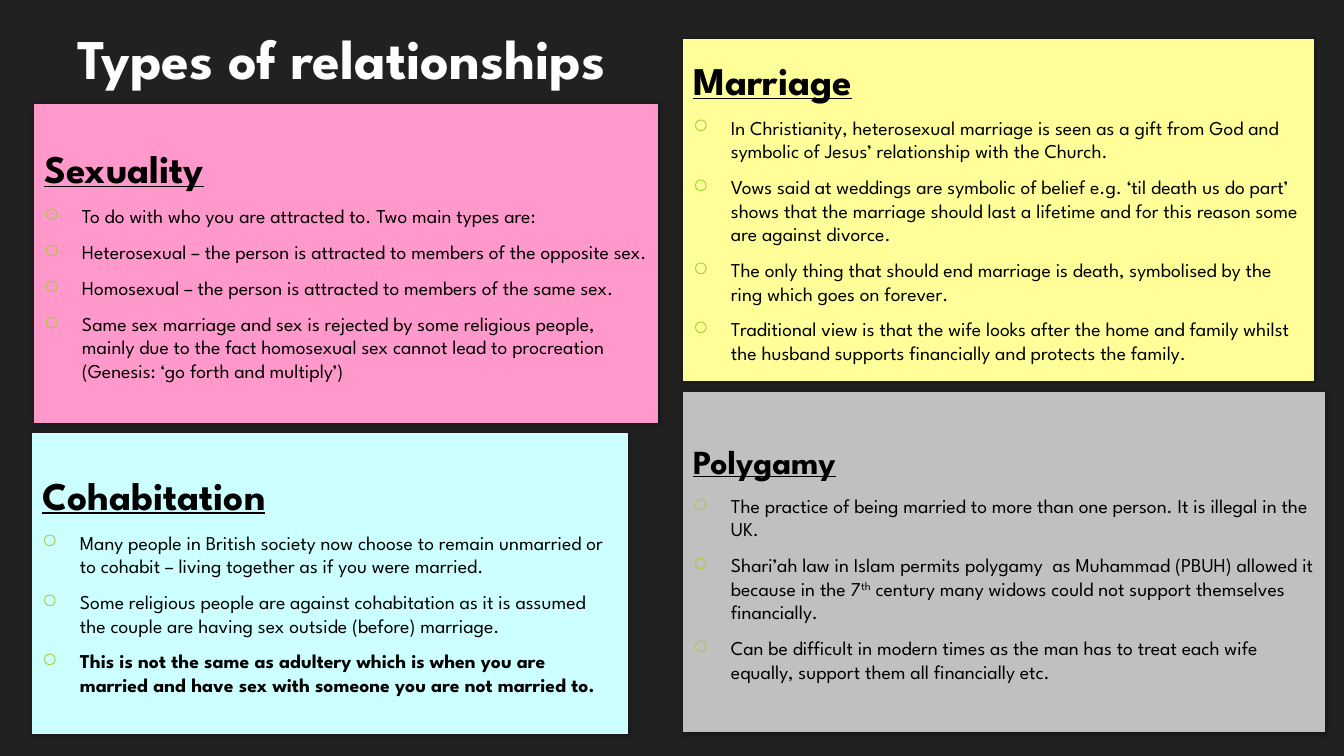
from lxml import etree
from pptx import Presentation
from pptx.dml.color import RGBColor
from pptx.enum.shapes import MSO_SHAPE
from pptx.enum.text import MSO_ANCHOR, PP_ALIGN
from pptx.oxml.ns import qn
from pptx.util import Pt

RECT = MSO_SHAPE.RECTANGLE
MIDDLE, BOTTOM = MSO_ANCHOR.MIDDLE, MSO_ANCHOR.BOTTOM
LEFT = PP_ALIGN.LEFT
FONT = "League Spartan"
BLACK, WHITE, DARK, GREEN = "000000", "FEFEFE", "212121", "9ECD33"
BODY_SIZE = 14
INDENT = Pt(27)

# Each panel: heading, heading size, fill, (left, top, width, height), points.
# A point is a list of (text, style) runs.
PANELS = [
    ("Sexuality", 28, "FF99CC", (24.5, 75, 445.5, 226.5), [
        [("To do with who you are attracted to. Two main types are:", "")],
        [("Heterosexual – the person is attracted to members of the opposite sex.", "")],
        [("Homosexual – the person is attracted to members of the same sex.", "")],
        [("Same sex marriage and sex is rejected by some religious people, mainly due to "
          "the fact homosexual sex cannot lead to procreation (Genesis: ‘go forth and "
          "multiply’)", "")],
    ]),
    ("Marriage", 28, "FFFF99", (488, 28.5, 450.5, 243.5), [
        [("In Christianity, heterosexual marriage is seen as a gift from God and symbolic "
          "of Jesus’ relationship with the Church.", "")],
        [("Vows said at weddings are symbolic of belief e.g. ‘til death us do part’ shows "
          "that the marriage should last a lifetime and for this reason some are against "
          "divorce.", "")],
        [("The only thing that should end marriage is death, symbolised by the ring which "
          "goes on forever.", "")],
        [("Traditional view is that the wife looks after the home and family whilst the "
          "husband supports financially and protects the family.", "")],
    ]),
    ("Cohabitation", 28, "CCFFFF", (23, 310, 425, 214), [
        [("Many people in British society now choose to remain unmarried or to cohabit – "
          "living together as if you were married.", "")],
        [("Some religious people are against cohabitation as it is assumed the couple are "
          "having sex outside (before) marriage.", "")],
        [("This is not the same as adultery which is when you are married and have sex "
          "with someone you are not married to.", "bold")],
    ]),
    ("Polygamy", 24, "C0C0C0", (488, 280.5, 458, 242), [
        [("The practice of being married to more than one person. It is illegal in the "
          "UK.", "")],
        [("Shari’ah law in Islam permits polygamy  as Muhammad (PBUH) allowed it because "
          "in the 7", ""), ("th", "super"),
         (" century many widows could not support themselves financially.", "")],
        [("Can be difficult in modern times as the man has to treat each wife equally, "
          "support them all financially etc.", "")],
    ]),
]


def rgb(color):
    return RGBColor.from_string(color)


def make_shadow(blur, dist, alpha):
    """Return an effect list with one black outer shadow (alpha in percent)."""
    effects = etree.Element(qn("a:effectLst"))
    shadow = etree.SubElement(effects, qn("a:outerShdw"), blurRad=str(Pt(blur)),
                              dist=str(Pt(dist)), dir="2700000", algn="tl", rotWithShape="0")
    color = etree.SubElement(shadow, qn("a:srgbClr"), val=BLACK)
    etree.SubElement(color, qn("a:alpha"), val=str(alpha * 1000))
    return effects


def add_run(p, text, size, color, bold=False, underline=False):
    r = p.add_run()
    r.text = text
    r.font.size = Pt(size)
    r.font.bold = bold
    r.font.underline = underline
    r.font.color.rgb = rgb(color)
    r.font.name = FONT
    return r


def format_paragraph(p, size, bullet):
    """Set spacing and hanging indent, with a green ring as bullet if asked."""
    p.alignment = LEFT
    p.space_before = Pt(size * 0.2)
    p.space_after = Pt(6)
    pPr = p._p.get_or_add_pPr()
    pPr.set("marL", str(INDENT))
    pPr.set("indent", str(-INDENT))
    if bullet:
        color = etree.SubElement(pPr, qn("a:buClr"))
        etree.SubElement(color, qn("a:srgbClr"), val=GREEN)
        etree.SubElement(pPr, qn("a:buChar"), char="○")


def add_title(s, text):
    tb = s.shapes.add_textbox(Pt(48), Pt(-21.5), Pt(864), Pt(90))
    tf = tb.text_frame
    tf.word_wrap = True
    tf.vertical_anchor = BOTTOM
    r = add_run(tf.paragraphs[0], text, 40, WHITE, bold=True)
    r.font.fill._xPr.find(qn("a:solidFill")).addnext(make_shadow(3, 2, 60))


def add_panel(s, heading, size, fill, box, points):
    sp = s.shapes.add_shape(RECT, *map(Pt, box))
    sp.fill.solid()
    sp.fill.fore_color.rgb = rgb(fill)
    sp.line.color.rgb = rgb(fill)
    sp.line.width = Pt(0.75)
    sp._element.spPr.append(make_shadow(4, 0, 40))
    tf = sp.text_frame
    tf.word_wrap = True
    tf.vertical_anchor = MIDDLE
    p = tf.paragraphs[0]
    format_paragraph(p, size, bullet=False)
    add_run(p, heading, size, BLACK, bold=True, underline=True)
    for runs in points:
        p = tf.add_paragraph()
        format_paragraph(p, BODY_SIZE, bullet=True)
        for text, style in runs:
            r = add_run(p, text, BODY_SIZE, BLACK, bold=style == "bold")
            if style == "super":
                r._r.get_or_add_rPr().set("baseline", "30000")


def main():
    prs = Presentation()
    prs.slide_width, prs.slide_height = Pt(960), Pt(540)
    s = prs.slides.add_slide(prs.slide_layouts[6])
    s.background.fill.solid()
    s.background.fill.fore_color.rgb = rgb(DARK)
    add_title(s, "Types of relationships")
    for panel in PANELS:
        add_panel(s, *panel)
    prs.save("out.pptx")


if __name__ == "__main__":
    main()
